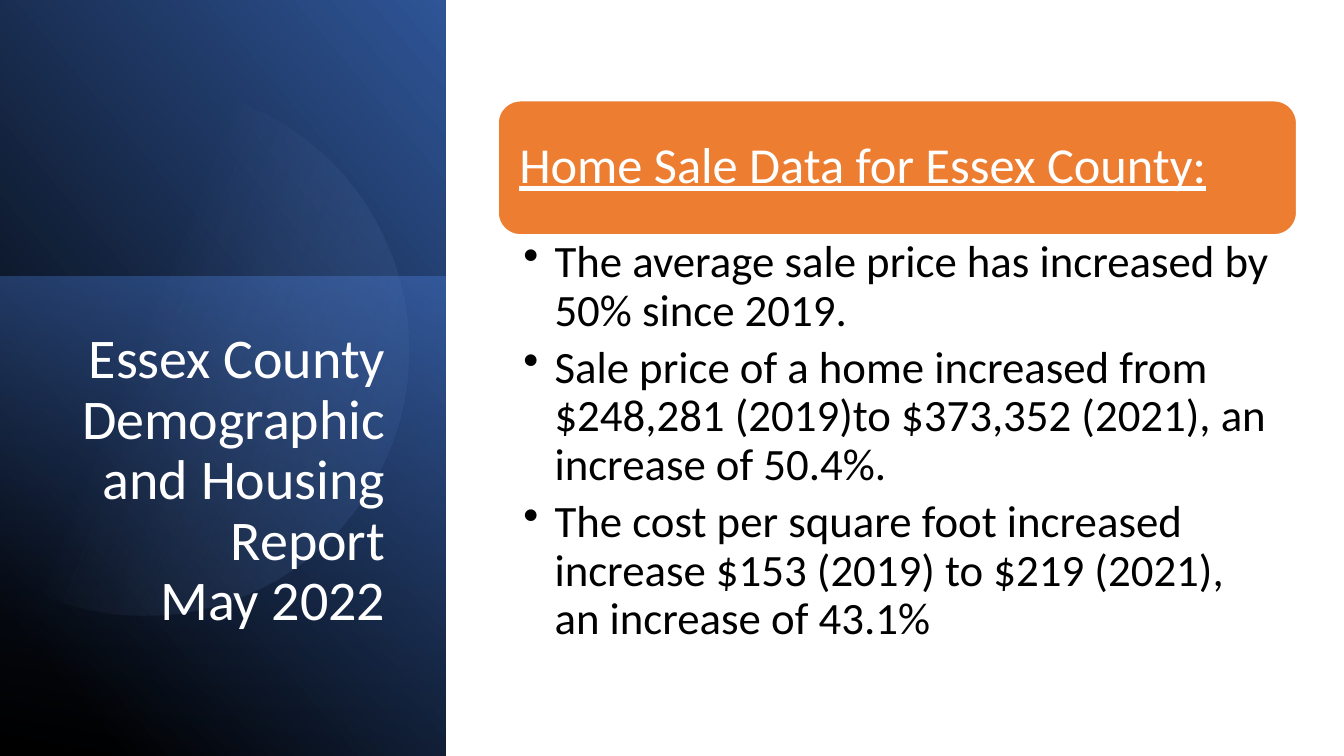
from pptx import Presentation
from pptx.dml.color import RGBColor
from pptx.enum.shapes import MSO_SHAPE
from pptx.enum.text import MSO_ANCHOR, PP_ALIGN
from pptx.oxml.ns import qn
from pptx.util import Inches, Pt
from lxml import etree

RECT, ROUND = MSO_SHAPE.RECTANGLE, MSO_SHAPE.ROUNDED_RECTANGLE
TOP, MIDDLE = MSO_ANCHOR.TOP, MSO_ANCHOR.MIDDLE
LEFT, RIGHT = PP_ALIGN.LEFT, PP_ALIGN.RIGHT

COLORS = {
    "white": "FFFFFF", "black": "000000", "orange": "ED7D31",
    "blue": "4472C4", "deep": "2F5597", "navy": "203864", "pale": "8FAADC",
}
FACTS = [
    "The average sale price has increased by 50% since 2019.",
    "Sale price of a home increased from $248,281 (2019)to $373,352 (2021), "
    "an increase of 50.4%.",
    "The cost per square foot increased increase $153 (2019) to $219 (2021), "
    "an increase of 43.1%",
]
START = (1.43, 0.84)
CURVES = [
    [(1.6, 0.84), (1.78, 0.86), (1.96, 0.89)],
    [(3.38, 1.19), (4.29, 2.58), (4, 4)],
    [(3.71, 5.42), (2.32, 6.34), (0.9, 6.05)],
    [(0.63, 5.99), (0.38, 5.9), (0.15, 5.77)],
]
EDGE = [(0, 5.68), (0, 1.26), (0.2, 1.15)]
CLOSE = [(0.57, 0.95), (0.99, 0.84), START]


def color(name):
    """Return the named colour."""
    return RGBColor.from_string(COLORS[name])


def bezier(start, curve, steps=24):
    """Return points along a cubic curve, without its start."""
    ends = [start, *curve]
    points = []
    for step in range(1, steps + 1):
        t = step / steps
        parts = ((1 - t) ** 3, 3 * t * (1 - t) ** 2, 3 * t * t * (1 - t), t ** 3)
        points.append(tuple(sum(w * p[i] for w, p in zip(parts, ends)) for i in (0, 1)))
    return points


class Deck:
    """Holds the style and the current slide."""

    font = "Calibri"
    spacing = 0.9

    def __init__(self, slide):
        self.shapes = slide.shapes

    def shade(self, shape, stops, angle):
        """Fill a shape with a gradient of (position, colour, opacity) stops."""
        shape.shadow.inherit = False
        shape.line.fill.background()
        shape.fill.gradient()
        shape.fill.gradient_angle = 360 - angle
        for stop, (place, name, _) in zip(shape.fill.gradient_stops, stops):
            stop.position = place / 100
            stop.color.rgb = color(name)
        tints = shape.element.spPr.iter(qn("a:srgbClr"))
        for tint, (_, _, alpha) in zip(tints, stops):
            if alpha < 100:
                etree.SubElement(tint, qn("a:alpha")).set("val", str(alpha * 1000))

    def panel(self, box, turn, stops, angle, flip=False):
        """Add a turned gradient rectangle."""
        shape = self.shapes.add_shape(RECT, *map(Inches, box))
        shape.rotation = turn
        if flip:
            shape.element.spPr.find(qn("a:xfrm")).set("flipH", "1")
        self.shade(shape, stops, angle)

    def disc(self, points, stops, angle):
        """Add a gradient outline through the points."""
        first, *rest = [(Inches(x), Inches(y)) for x, y in points]
        pen = self.shapes.build_freeform(*first)
        pen.add_line_segments(rest, close=True)
        self.shade(pen.convert_to_shape(), stops, angle)

    def banner(self, box, fill):
        """Add a rounded bar with a white outline."""
        shape = self.shapes.add_shape(ROUND, *map(Inches, box))
        shape.shadow.inherit = False
        shape.fill.solid()
        shape.fill.fore_color.rgb = color(fill)
        shape.line.color.rgb = color("white")
        shape.line.width = Pt(1)

    def text(self, box, lines, size, tint, pads=(0.1, 0.05), anchor=TOP,
             align=LEFT, after=0, under=None, bullet=False):
        """Add a text box with one paragraph per line."""
        frame = self.shapes.add_textbox(*map(Inches, box)).text_frame
        frame.word_wrap = True
        frame.vertical_anchor = anchor
        frame.margin_left = frame.margin_right = Inches(pads[0])
        frame.margin_top = frame.margin_bottom = Inches(pads[1])
        frame.text = "\n".join(lines)
        for para in frame.paragraphs:
            para.alignment = align
            para.line_spacing = self.spacing
            para.space_after = Pt(after)
            if bullet:
                self.bullet(para)
            for run in para.runs:
                run.font.name = self.font
                run.font.size = Pt(size)
                run.font.underline = under
                run.font.color.rgb = color(tint)

    def bullet(self, para):
        """Give a paragraph a hanging bullet."""
        para.level = 1
        props = para._p.get_or_add_pPr()
        props.set("marL", str(Inches(0.31)))
        props.set("indent", str(-Inches(0.31)))
        etree.SubElement(props, qn("a:buChar")).set("char", "•")


def main():
    """Build the slide."""
    show = Presentation()
    show.slide_width, show.slide_height = Inches(13.33), Inches(7.5)
    deck = Deck(show.slides.add_slide(show.slide_layouts[6]))

    deck.panel((-1.55, 1.55, 7.52, 4.42), 90,
               [(11, "black", 100), (100, "deep", 100)], 310, flip=True)
    deck.panel((-0.17, 2.91, 4.76, 4.42), 270,
               [(0, "blue", 50), (100, "navy", 0)], 190)
    points = [START]
    for curve in CURVES:
        points += bezier(points[-1], curve)
    points += EDGE
    points += bezier(points[-1], CLOSE)
    deck.disc(points, [(39, "pale", 0), (100, "deep", 26)], 21.6)

    deck.text((0.58, 3.23, 3.34, 3.86),
              ["Essex County Demographic and Housing Report", "May 2022"],
              40, "white", align=RIGHT)
    deck.banner((4.94, 1, 7.92, 1.33), "orange")
    deck.text((5, 1.06, 7.79, 1.2), ["Home Sale Data for Essex County:"],
              36, "white", pads=(0.15, 0.15), anchor=MIDDLE, under=True)
    deck.text((4.94, 2.33, 7.92, 4.27), FACTS, 32, "black",
              pads=(0.25, 0.04), after=6.4, bullet=True)
    show.save("out.pptx")


if __name__ == "__main__":
    main()
